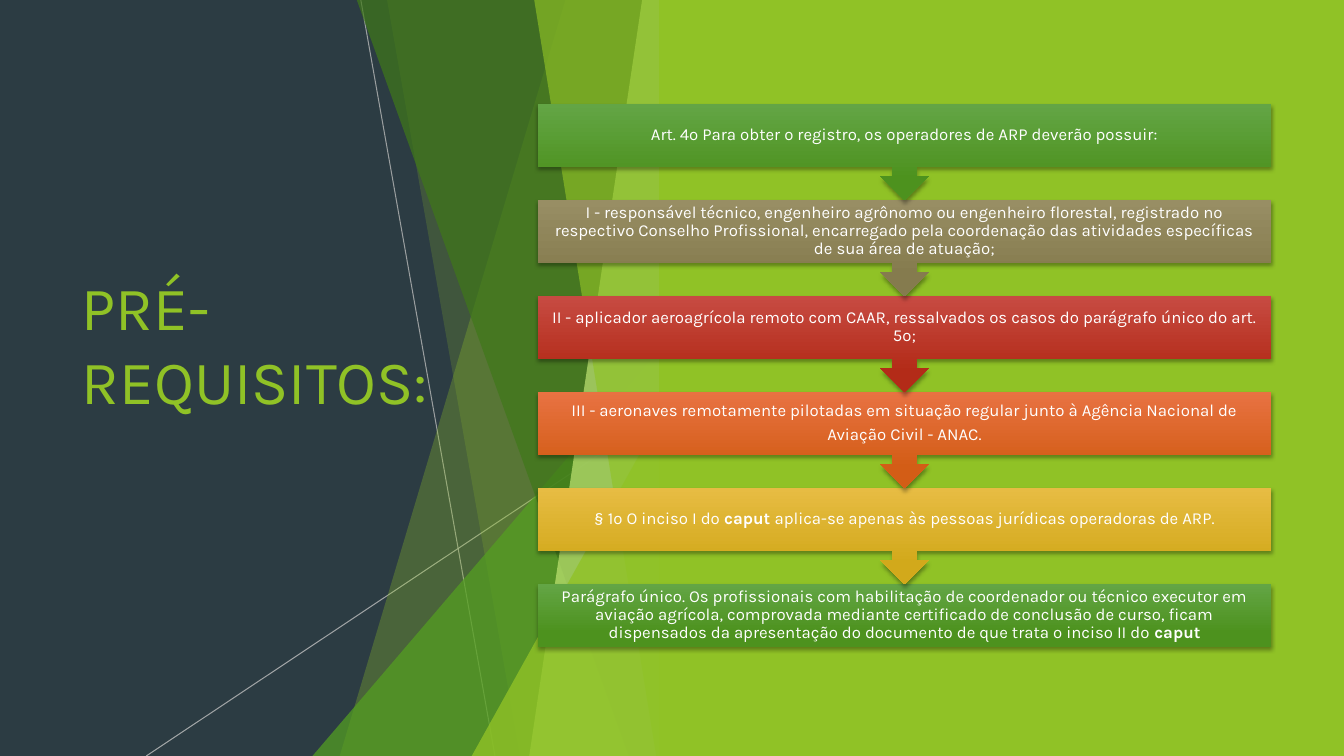
from pptx import Presentation
from pptx import util as u
from pptx.dml.color import RGBColor
from pptx.enum import shapes, text
from pptx.oxml import ns, parse_xml

WIDTH, HEIGHT = u.Inches(13.33), u.Inches(7.5)
FONT = "Karla"

SLATE = RGBColor(0x2C, 0x3C, 0x43)
LIME = RGBColor(0x90, 0xC2, 0x26)
PALE_LIME = RGBColor(0xC0, 0xE4, 0x74)
GREEN = RGBColor(0x54, 0xA0, 0x21)
FOREST = RGBColor(0x3F, 0x78, 0x19)
SILVER = RGBColor(0xBF, 0xBF, 0xBF)
WHITE = RGBColor(0xFF, 0xFF, 0xFF)
LEAF_SHADES = RGBColor(0x63, 0xA5, 0x45), RGBColor(0x4D, 0x92, 0x1E)
OLIVE_SHADES = RGBColor(0x98, 0x8E, 0x64), RGBColor(0x85, 0x7B, 0x4E)
RED_SHADES = RGBColor(0xC7, 0x4B, 0x42), RGBColor(0xB3, 0x2B, 0x18)
ORANGE_SHADES = RGBColor(0xE8, 0x72, 0x42), RGBColor(0xD3, 0x5D, 0x16)
GOLD_SHADES = RGBColor(0xE7, 0xBC, 0x43), RGBColor(0xD2, 0xA9, 0x1B)

# Percentages of the slide's width and height
FOLD = 50
CARD_LEFT, CARD_WIDTH = 40, 54.6
FIRST_CARD, CARD_PITCH = 13.75, 12.7
CARD_HEIGHT, CALLOUT_HEIGHT = 8.3, 12.75

# Each step: shades, then paragraphs whose odd-numbered runs are bold
STEPS = [
    (LEAF_SHADES, [["Art. 4º Para obter o registro, os operadores de ARP deverão possuir:"]]),
    (OLIVE_SHADES, [["I - responsável técnico, engenheiro agrônomo ou engenheiro florestal, "
                     "registrado no respectivo Conselho Profissional, encarregado pela "
                     "coordenação das atividades específicas de sua área de atuação;"]]),
    (RED_SHADES, [["II - aplicador aeroagrícola remoto com CAAR, ressalvados os casos do "
                   "parágrafo único do art. 5º;"]]),
    (ORANGE_SHADES, [["III - aeronaves remotamente pilotadas em situação regular junto à "
                      "Agência Nacional de"], ["Aviação Civil - ANAC."]]),
    (GOLD_SHADES, [["§ 1º O inciso I do ", "caput ",
                    "aplica-se apenas às pessoas jurídicas operadoras de ARP."]]),
    (LEAF_SHADES, [["Parágrafo único. Os profissionais com habilitação de coordenador ou "
                    "técnico executor em aviação agrícola, comprovada mediante certificado de "
                    "conclusão de curso, ficam dispensados da apresentação do documento de que "
                    "trata o inciso II do ", "caput"]]),
]


def col(percent):
    return round(WIDTH * percent / 100)


def row(percent):
    return round(HEIGHT * percent / 100)


def write(frame, paragraphs, size, color, align, spacing=1.0, after=0):
    """Fill a text frame; every second run of a paragraph is bold."""
    frame.word_wrap = True
    frame.auto_size = text.MSO_AUTO_SIZE.NONE
    frame.vertical_anchor = text.MSO_ANCHOR.MIDDLE
    for number, runs in enumerate(paragraphs):
        paragraph = frame.add_paragraph() if number else frame.paragraphs[0]
        paragraph.alignment = align
        paragraph.line_spacing = spacing
        paragraph.space_after = u.Pt(after)
        for position, words in enumerate(runs):
            run = paragraph.add_run()
            run.text = words
            run.font.name = FONT
            run.font.size = u.Pt(size)
            run.font.bold = position % 2 == 1
            run.font.color.rgb = color


def set_opacity(shape, percent):
    color = shape._element.spPr.find(".//" + ns.qn("a:srgbClr"))
    color.append(parse_xml(f'<a:alpha {ns.nsdecls("a")} val="{percent * 1000}"/>'))


def paint(shape, color, opacity=100):
    shape.shadow.inherit = False
    shape.fill.solid()
    shape.fill.fore_color.rgb = color
    shape.line.fill.background()
    if opacity < 100:
        set_opacity(shape, opacity)


def add_ray(slide, start, end, opacity):
    ray = slide.shapes.add_connector(
        shapes.MSO_CONNECTOR.STRAIGHT,
        col(start[0]), row(start[1]), col(end[0]), row(end[1]))
    ray.line.color.rgb = SILVER
    ray.line.width = u.Pt(0.75)
    set_opacity(ray, opacity)
    ray._element.spPr.append(parse_xml(f'<a:effectLst {ns.nsdecls("a")}/>'))


def add_ribbon(slide, top, bottom, color, opacity):
    """Full-height band from a slanted left edge to the fold."""
    builder = slide.shapes.build_freeform(col(top), 0)
    builder.add_line_segments(
        [(col(FOLD), 0), (col(FOLD), HEIGHT), (col(bottom), HEIGHT)], close=True)
    paint(builder.convert_to_shape(), color, opacity)


def add_wedge(slide, left, top, color, opacity):
    """Right triangle in the bottom corner beside the fold."""
    wedge = slide.shapes.add_shape(
        shapes.MSO_SHAPE.ISOSCELES_TRIANGLE,
        col(left), row(top), col(FOLD - left), row(100 - top))
    wedge.adjustments[0] = 1
    paint(wedge, color, opacity)


def add_step(slide, number, shades, paragraphs):
    last = number == len(STEPS) - 1
    kind = shapes.MSO_SHAPE.RECTANGLE if last else shapes.MSO_SHAPE.DOWN_ARROW_CALLOUT
    step = slide.shapes.add_shape(
        kind, col(CARD_LEFT), row(FIRST_CARD + number * CARD_PITCH),
        col(CARD_WIDTH), row(CARD_HEIGHT if last else CALLOUT_HEIGHT))
    step.line.fill.background()
    step.fill.gradient()
    step.fill.gradient_angle = 270
    for stop, shade, position in zip(step.fill.gradient_stops, shades, (0, 0.78)):
        stop.color.rgb = shade
        stop.position = position
    step.shadow.inherit = False
    step._element.spPr.find(ns.qn("a:effectLst")).append(parse_xml(
        f'<a:outerShdw {ns.nsdecls("a")} blurRad="{u.Pt(3)}" dist="{u.Pt(2)}" dir="5400000" '
        'rotWithShape="0"><a:srgbClr val="000000"><a:alpha val="35000"/></a:srgbClr>'
        '</a:outerShdw>'))
    frame = step.text_frame
    frame.margin_left = frame.margin_right = u.Inches(0.09)
    frame.margin_top = frame.margin_bottom = u.Inches(0.09)
    write(frame, paragraphs, size=12, color=WHITE, align=text.PP_ALIGN.CENTER,
          spacing=0.9, after=4.2)


def add_title(slide):
    title = slide.shapes.title
    title.left, title.top = col(5.33), row(20.13)
    title.width, title.height = col(29.1), row(59.73)
    title.text_frame.margin_bottom = row(10)
    write(title.text_frame, [["PRÉ-REQUISITOS:"]], size=44, color=LIME,
          align=text.PP_ALIGN.LEFT)


def add_backdrop(slide):
    add_ray(slide, (26.85, 0), (36.83, 100), 75)
    add_ray(slide, (FOLD, 53.73), (10.88, 100), 80)
    add_ribbon(slide, 42.08, 25.28, LIME, 30)
    add_ribbon(slide, 28.8, 38.7, LIME, 20)
    add_wedge(slide, 23.25, 44.4, GREEN, 72)
    add_ribbon(slide, 26.55, 46.8, FOREST, 70)
    add_ribbon(slide, 47.78, 39.38, PALE_LIME, 70)
    add_ribbon(slide, 39.75, 48.83, LIME, 65)
    add_wedge(slide, 35.1, 52.4, LIME, 80)
    panel = slide.shapes.add_shape(
        shapes.MSO_SHAPE.RECTANGLE, col(49.05), 0, col(50.95), HEIGHT)
    paint(panel, LIME)


def main():
    deck = Presentation()
    deck.slide_width, deck.slide_height = WIDTH, HEIGHT
    slide = deck.slides.add_slide(deck.slide_layouts[5])
    slide.background.fill.solid()
    slide.background.fill.fore_color.rgb = SLATE
    add_title(slide)
    add_backdrop(slide)
    for number, (shades, paragraphs) in reversed(list(enumerate(STEPS))):
        add_step(slide, number, shades, paragraphs)
    deck.save("out.pptx")


if __name__ == "__main__":
    main()
